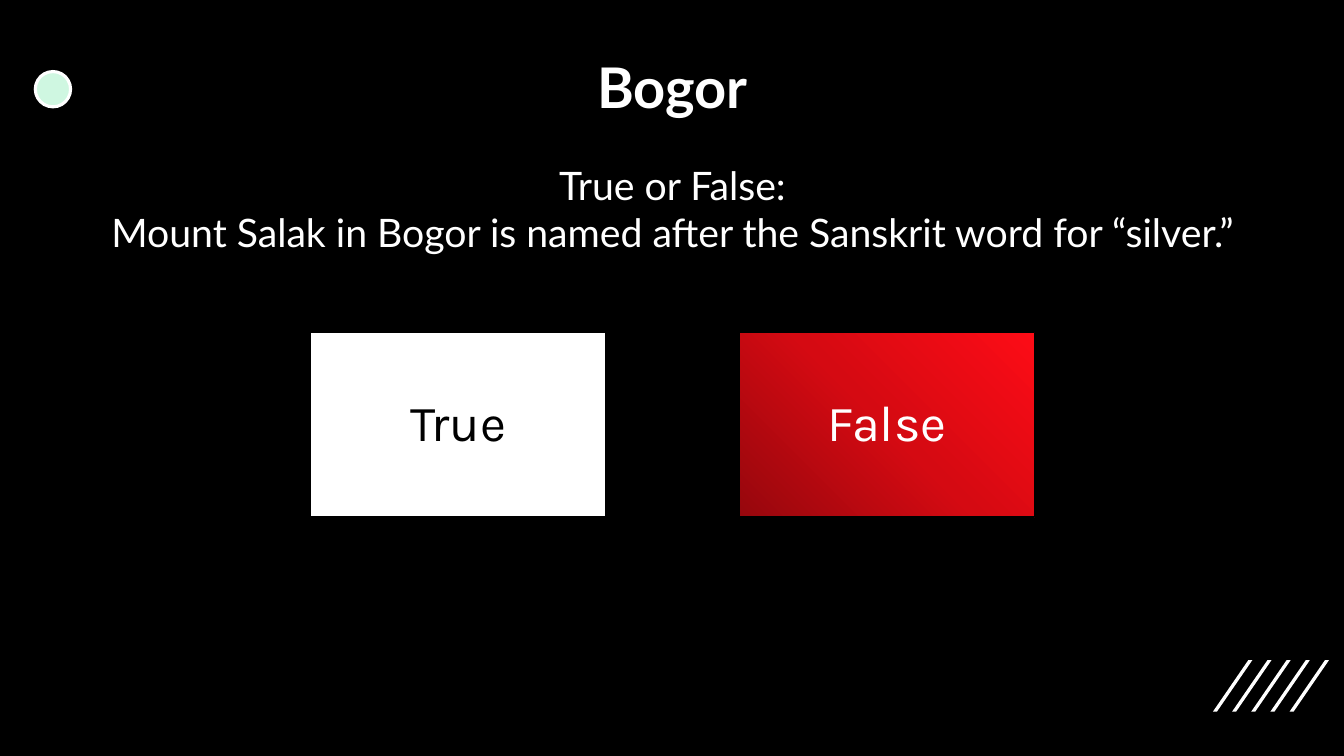
from copy import deepcopy

from pptx import Presentation
from pptx.dml.color import RGBColor
from pptx.enum.shapes import MSO_SHAPE
from pptx.enum.text import MSO_ANCHOR, MSO_AUTO_SIZE, PP_ALIGN
from pptx.oxml.ns import qn
from pptx.util import Inches, Pt

BLACK = RGBColor(0x00, 0x00, 0x00)
WHITE = RGBColor(0xFF, 0xFF, 0xFF)
MINT = RGBColor(0xCF, 0xF7, 0xE1)
REDS = (RGBColor(0x96, 0x07, 0x0D), RGBColor(0xD5, 0x0A, 0x12), RGBColor(0xFD, 0x0C, 0x16))

CENTER = PP_ALIGN.CENTER
TOP = MSO_ANCHOR.TOP
MIDDLE = MSO_ANCHOR.MIDDLE
FIT_SHAPE = MSO_AUTO_SIZE.SHAPE_TO_FIT_TEXT
RECTANGLE = MSO_SHAPE.RECTANGLE
OVAL = MSO_SHAPE.OVAL

STRIPE_COUNT = 5
STRIPE_STEP = 0.19
CARD_TOP, CARD_WIDTH, CARD_HEIGHT = 3.3, 2.93, 1.83


def write_lines(sp, lines, size, font, color, bold=False, anchor=TOP):
    """Fill a shape with centred paragraphs in one style."""
    tf = sp.text_frame
    tf.word_wrap = True
    tf.vertical_anchor = anchor
    tf.text = "\n".join(lines)
    for p in tf.paragraphs:
        p.alignment = CENTER
        for r in p.runs:
            r.font.size = Pt(size)
            r.font.name = font
            r.font.bold = bold
            r.font.color.rgb = color
    return tf


def add_stripes(slide):
    for i in range(STRIPE_COUNT):
        x = 12.03 + i * STRIPE_STEP
        builder = slide.shapes.build_freeform(Inches(x + 0.04), Inches(7.06), scale=1.0)
        corners = [(x, 7.06), (x + 0.35, 6.55), (x + 0.39, 6.55)]
        builder.add_line_segments([(Inches(cx), Inches(cy)) for cx, cy in corners], close=True)
        sp = builder.convert_to_shape()
        sp.shadow.inherit = False
        sp.fill.solid()
        sp.fill.fore_color.rgb = WHITE
        sp.line.fill.background()


def add_dot(slide):
    sp = slide.shapes.add_shape(OVAL, Inches(0.35), Inches(0.71), Inches(0.35), Inches(0.35))
    sp.shadow.inherit = False
    sp.fill.solid()
    sp.fill.fore_color.rgb = MINT
    sp.line.color.rgb = WHITE
    sp.line.width = Pt(2.25)


def set_title(slide, text):
    sp = slide.shapes.title
    sp.left, sp.top, sp.width, sp.height = Inches(3.74), Inches(0.47), Inches(5.86), Inches(0.77)
    tf = write_lines(sp, [text], 40, "Lato", WHITE, bold=True)
    tf.auto_size = FIT_SHAPE


def add_question(slide, lines):
    sp = slide.shapes.add_textbox(Inches(0.09), Inches(1.55), Inches(13.16), Inches(1.04))
    tf = write_lines(sp, lines, 28, "Lato", WHITE)
    tf.auto_size = FIT_SHAPE


def fill_gradient(sp, colors, angle):
    """Spread the colours evenly along a linear gradient."""
    sp.fill.gradient()
    sp.fill.gradient_angle = angle
    stops = sp._element.spPr.find(qn("a:gradFill")).find(qn("a:gsLst"))
    for _ in colors[2:]:
        stops.append(deepcopy(stops[0]))
    for i, (stop, color) in enumerate(zip(sp.fill.gradient_stops, colors)):
        stop.position = i / (len(colors) - 1)
        stop.color.rgb = color


def add_answer(slide, left, text, fills, text_color):
    sp = slide.shapes.add_shape(RECTANGLE, Inches(left), Inches(CARD_TOP),
                                Inches(CARD_WIDTH), Inches(CARD_HEIGHT))
    sp.shadow.inherit = False
    if len(fills) == 1:
        sp.fill.solid()
        sp.fill.fore_color.rgb = fills[0]
    else:
        fill_gradient(sp, fills, 45)
    sp.line.color.rgb = BLACK
    sp.line.width = Pt(1)
    tf = write_lines(sp, [text], 36, "Karla", text_color, anchor=MIDDLE)
    tf.margin_left = tf.margin_right = tf.margin_top = tf.margin_bottom = Inches(0.23)
    tf.paragraphs[0].line_spacing = 0.9


def main():
    prs = Presentation()
    prs.slide_width, prs.slide_height = Inches(13.33), Inches(7.5)
    slide = prs.slides.add_slide(prs.slide_layouts[5])
    slide.background.fill.solid()
    slide.background.fill.fore_color.rgb = BLACK

    add_stripes(slide)
    add_dot(slide)
    set_title(slide, "Bogor")
    add_question(slide, [
        "True or False:",
        "Mount Salak in Bogor is named after the Sanskrit word for “silver.”",
    ])
    add_answer(slide, 3.08, "True", [WHITE], BLACK)
    add_answer(slide, 7.33, "False", REDS, WHITE)
    prs.save("out.pptx")


if __name__ == "__main__":
    main()
